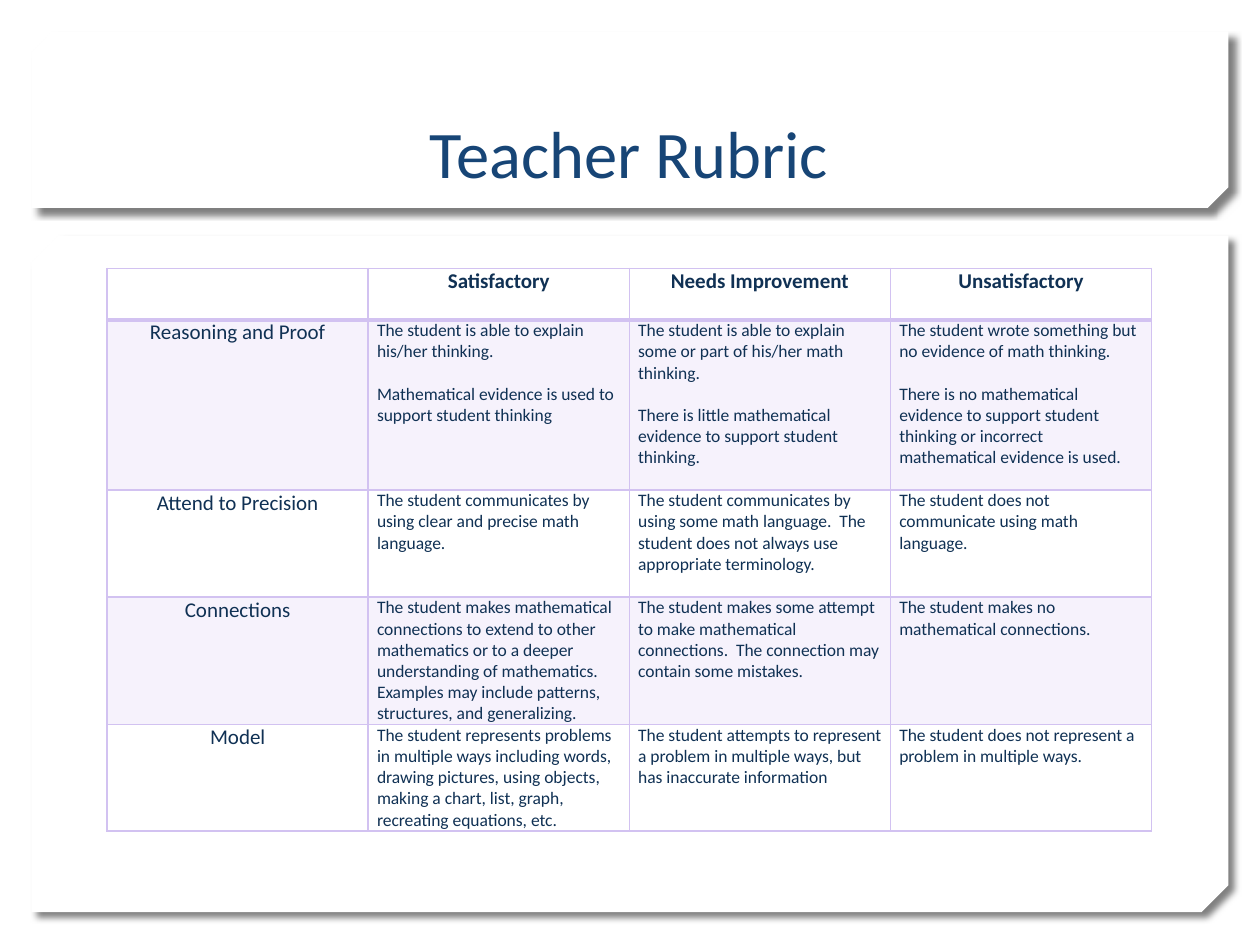
import pptx
import pptx.dml.color
import pptx.enum.shapes
import pptx.enum.text
import pptx.oxml
import pptx.oxml.ns
import pptx.util

Inches = pptx.util.Inches
Pt = pptx.util.Pt
ALIGN = pptx.enum.text.PP_ALIGN

FONT = "Calibri"
COLORS = {
    "panel": "FFFFFF",
    "shadow": "000000",
    "title": "174576",
    "text": "103154",
    "lilac": "D2C2F1",
}
LEFT, WIDTH = 0.85, 8.29
ROW_HEIGHTS = [0.41, 1.35, 0.85, 1.01, 0.84]

# Each cell is a list of paragraphs
HEADER = [[], ["Satisfactory"], ["Needs Improvement"], ["Unsatisfactory"]]
CRITERIA = [
    [
        ["Reasoning and Proof"],
        ["The student is able to explain his/her thinking.",
         "Mathematical evidence is used to support student thinking"],
        ["The student is able to explain some or part of his/her math thinking.",
         "There is little mathematical evidence to support student thinking."],
        ["The student wrote something but no evidence of math thinking.",
         "There is no mathematical evidence to support student thinking or "
         "incorrect mathematical evidence is used."],
    ],
    [
        ["Attend to Precision"],
        ["The student communicates by using clear and precise math language."],
        ["The student communicates by using some math language.  The student "
         "does not always use appropriate terminology."],
        ["The student does not communicate using math language."],
    ],
    [
        ["Connections"],
        ["The student makes mathematical connections to extend to other "
         "mathematics or to a deeper understanding of mathematics.  Examples "
         "may include patterns, structures, and generalizing."],
        ["The student makes some attempt to make mathematical connections.  "
         "The connection may contain some mistakes."],
        ["The student makes no mathematical connections."],
    ],
    [
        ["Model"],
        ["The student represents problems in multiple ways including words, "
         "drawing pictures, using objects, making a chart, list, graph, "
         "recreating equations, etc."],
        ["The student attempts to represent a problem in multiple ways, but "
         "has inaccurate information"],
        ["The student does not represent a problem in multiple ways."],
    ],
]


def rgb(name):
    return pptx.dml.color.RGBColor.from_string(COLORS[name])


def parse_xml(tag, attrs, content):
    return pptx.oxml.parse_xml(
        f'<a:{tag} {pptx.oxml.ns.nsdecls("a")} {attrs}>{content}</a:{tag}>')


def write_text(tf, paragraphs, size, color="text", bold=False,
               align=ALIGN.LEFT, gap=0):
    for i, text in enumerate(paragraphs):
        p = tf.paragraphs[0] if i == 0 else tf.add_paragraph()
        p.alignment = align
        p.space_before = Pt(gap if i else 0)
        r = p.add_run()
        r.text = text
        r.font.name = FONT
        r.font.size = Pt(size)
        r.font.bold = bold
        r.font.color.rgb = rgb(color)


def add_panel(s, index, top, height, snip):
    """Add a white sheet with a snipped corner, behind the title."""
    sp = s.shapes.add_shape(
        pptx.enum.shapes.MSO_SHAPE.SNIP_2_DIAG_RECTANGLE,
        Inches(0.25), Inches(top), Inches(9.5), Inches(height))
    sp.adjustments[0] = 0
    sp.adjustments[1] = snip
    sp.fill.solid()
    sp.fill.fore_color.rgb = rgb("panel")
    sp.line.fill.background()
    spPr = sp._element.spPr
    spPr.xfrm.set("flipV", "1")
    spPr.append(parse_xml(
        "effectLst", "",
        f'<a:outerShdw blurRad="{Pt(4)}" dist="{Pt(5)}" dir="2700000" '
        'algn="tl" rotWithShape="0">'
        f'<a:srgbClr val="{COLORS["shadow"]}"><a:alpha val="50000"/>'
        '</a:srgbClr></a:outerShdw>'))
    s.shapes._spTree.insert(2 + index, sp._element)


def add_title(s, text):
    sp = s.shapes.title
    sp.left, sp.top = Inches(LEFT), Inches(0.32)
    sp.width, sp.height = Inches(WIDTH), Inches(1.25)
    sp.text_frame.vertical_anchor = pptx.enum.text.MSO_ANCHOR.BOTTOM
    write_text(sp.text_frame, [text], 38, color="title", align=ALIGN.CENTER)


def format_cell(cell, top=1, bottom=1, tinted=False):
    cell.margin_left = cell.margin_right = Inches(0.07)
    cell.margin_top = cell.margin_bottom = 0
    tcPr = cell._tc.get_or_add_tcPr()
    for side, width in (("L", 1), ("R", 1), ("T", top), ("B", bottom)):
        tcPr.append(parse_xml(
            f"ln{side}", f'w="{Pt(width)}"',
            f'<a:solidFill><a:srgbClr val="{COLORS["lilac"]}"/></a:solidFill>'))
    if tinted:
        cell.fill.solid()
        cell.fill.fore_color.rgb = rgb("lilac")
        color = tcPr.find(pptx.oxml.ns.qn("a:solidFill"))[0]
        color.append(parse_xml("alpha", 'val="20000"', ""))
    else:
        cell.fill.background()


def add_rubric(s, rows):
    table = s.shapes.add_table(
        len(rows), len(rows[0]), Inches(LEFT), Inches(2.13),
        Inches(WIDTH), Inches(sum(ROW_HEIGHTS))).table
    table.first_row = table.horz_banding = False
    for i, (row, height) in enumerate(zip(rows, ROW_HEIGHTS)):
        table.rows[i].height = Inches(height)
        for j, paragraphs in enumerate(row):
            cell = table.cell(i, j)
            # A heavier rule separates the header; odd rows are tinted
            format_cell(cell, top=2 if i == 1 else 1,
                        bottom=2 if i == 0 else 1, tinted=i % 2 == 1)
            if i == 0 or j == 0:
                write_text(cell.text_frame, paragraphs, 12, bold=i == 0,
                           align=ALIGN.CENTER)
            else:
                write_text(cell.text_frame, paragraphs, 10, gap=12)


def main():
    prs = pptx.Presentation()
    prs.slide_width, prs.slide_height = Inches(10), Inches(7.5)
    s = prs.slides.add_slide(prs.slide_layouts[5])

    # Background sheets
    add_panel(s, 0, top=1.87, height=5.37, snip=0.04)
    add_panel(s, 1, top=0.25, height=1.4, snip=0.117)

    # Content
    add_title(s, "Teacher Rubric")
    add_rubric(s, [HEADER] + CRITERIA)
    prs.save("out.pptx")


if __name__ == "__main__":
    main()
